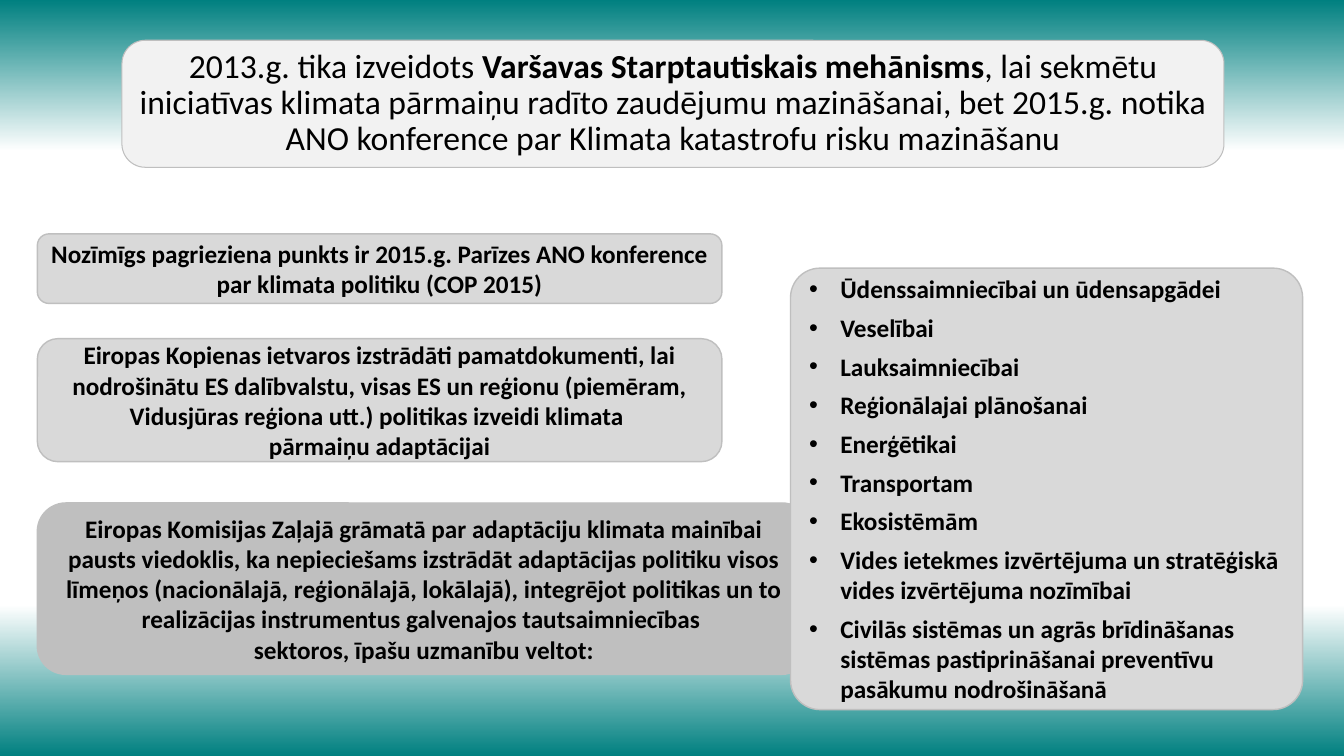
from dataclasses import dataclass

from lxml import etree
from pptx import Presentation
from pptx.dml.color import RGBColor
from pptx.enum.shapes import MSO_SHAPE
from pptx.enum.text import MSO_ANCHOR, PP_ALIGN
from pptx.oxml.ns import qn
from pptx.util import Inches, Pt

ROUND = MSO_SHAPE.ROUNDED_RECTANGLE
MIDDLE = MSO_ANCHOR.MIDDLE
LEFT, CENTER = PP_ALIGN.LEFT, PP_ALIGN.CENTER


@dataclass(frozen=True)
class Theme:
    font: str = "Calibri"
    ink: str = "000000"
    edge: str = "BFBFBF"
    pale: str = "F2F2F2"
    light: str = "D9D9D9"
    dark: str = "BFBFBF"
    fade: tuple = ((0, "008080"), (20, "FFFFFF"), (80, "FFFFFF"), (100, "008080"))
    head: int = 24
    body: int = 18


THEME = Theme()

TITLE = [
    ("2013.g. tika izveidots ", False),
    ("Varšavas Starptautiskais mehānisms", True),
    (", lai sekmētu iniciatīvas klimata pārmaiņu radīto zaudējumu mazināšanai, "
     "bet 2015.g. notika ANO konference par Klimata katastrofu risku mazināšanu", False),
]
# Top, width, height, fill and paragraphs of each box in the left column
STEPS = [
    (2.32, 6.79, 0.69, THEME.light, [
        "Nozīmīgs pagrieziena punkts ir 2015.g. Parīzes ANO konference "
        "par klimata politiku (COP 2015)"]),
    (3.36, 6.79, 1.22, THEME.light, [
        "Eiropas Kopienas ietvaros izstrādāti pamatdokumenti, lai nodrošinātu "
        "ES dalībvalstu, visas ES un reģionu (piemēram, Vidusjūras reģiona utt.) "
        "politikas izveidi klimata ",
        "pārmaiņu adaptācijai"]),
    (4.99, 7.67, 1.7, THEME.dark, [
        "Eiropas Komisijas Zaļajā grāmatā par adaptāciju klimata mainībai pausts "
        "viedoklis, ka nepieciešams izstrādāt adaptācijas politiku visos līmeņos "
        "(nacionālajā, reģionālajā, lokālajā), integrējot politikas un to "
        "realizācijas instrumentus galvenajos tautsaimniecības ",
        "sektoros, īpašu uzmanību veltot:"]),
]
SECTORS = [
    "Ūdenssaimniecībai un ūdensapgādei",
    "Veselībai",
    "Lauksaimniecībai",
    "Reģionālajai plānošanai",
    "Enerģētikai",
    "Transportam",
    "Ekosistēmām",
    "Vides ietekmes izvērtējuma un stratēģiskā vides izvērtējuma nozīmībai",
    "Civilās sistēmas un agrās brīdināšanas sistēmas pastiprināšanai "
    "preventīvu pasākumu nodrošināšanā",
]


def paint(slide):
    """Fill the background with the vertical fade."""
    fill = slide.background.fill
    fill.gradient()
    fill.gradient_angle = 270
    stops = next(slide.element.iter(qn("a:gsLst")))
    for stop in list(stops):
        stops.remove(stop)
    for spot, color in THEME.fade:
        stop = etree.SubElement(stops, qn("a:gs"), pos=str(spot * 1000))
        etree.SubElement(stop, qn("a:srgbClr"), val=color)


def panel(slide, box, fill, adj=None, line=1):
    shape = slide.shapes.add_shape(ROUND, *map(Inches, box))
    shape.shadow.inherit = False
    if adj is not None:
        shape.adjustments[0] = adj
    shape.fill.solid()
    shape.fill.fore_color.rgb = RGBColor.from_string(fill)
    shape.line.color.rgb = RGBColor.from_string(THEME.edge)
    shape.line.width = Pt(line)
    return shape


def write(shape, paras, size=THEME.body, align=CENTER, space=None, after=None, bullet=False):
    """Write paragraphs, each a list of (text, bold) runs."""
    frame = shape.text_frame
    frame.word_wrap = True
    frame.vertical_anchor = MIDDLE
    for i, runs in enumerate(paras):
        para = frame.add_paragraph() if i else frame.paragraphs[0]
        para.alignment = align
        if space:
            para.line_spacing = space
        if after:
            para.space_after = Pt(after)
        if bullet:
            props = para._p.get_or_add_pPr()
            props.set("marL", str(Inches(0.31)))
            props.set("indent", str(-Inches(0.31)))
            etree.SubElement(props, qn("a:buFont"), typeface="Arial")
            etree.SubElement(props, qn("a:buChar"), char="•")
        for text, bold in runs:
            run = para.add_run()
            run.text = text
            font = run.font
            font.name, font.size, font.bold = THEME.font, Pt(size), bold
            font.color.rgb = RGBColor.from_string(THEME.ink)


def strong(texts):
    return [[(text, True)] for text in texts]


def title(slide, box):
    write(panel(slide, box, THEME.pale, 0.184, 0.75), [TITLE], size=THEME.head, space=0.9)


def steps(slide, left):
    for top, width, height, fill, texts in STEPS:
        write(panel(slide, (left, top, width, height), fill), strong(texts))


def sectors(slide, box):
    write(panel(slide, box, THEME.light, 0.067), strong(SECTORS),
          align=LEFT, after=6, bullet=True)


def main():
    deck = Presentation()
    deck.slide_width, deck.slide_height = Inches(13.33), Inches(7.5)
    slide = deck.slides.add_slide(deck.slide_layouts[6])
    paint(slide)
    title(slide, (1.21, 0.4, 10.93, 1.26))
    steps(slide, 0.37)
    sectors(slide, (7.84, 2.66, 5.08, 4.38))
    deck.save("out.pptx")


if __name__ == "__main__":
    main()
